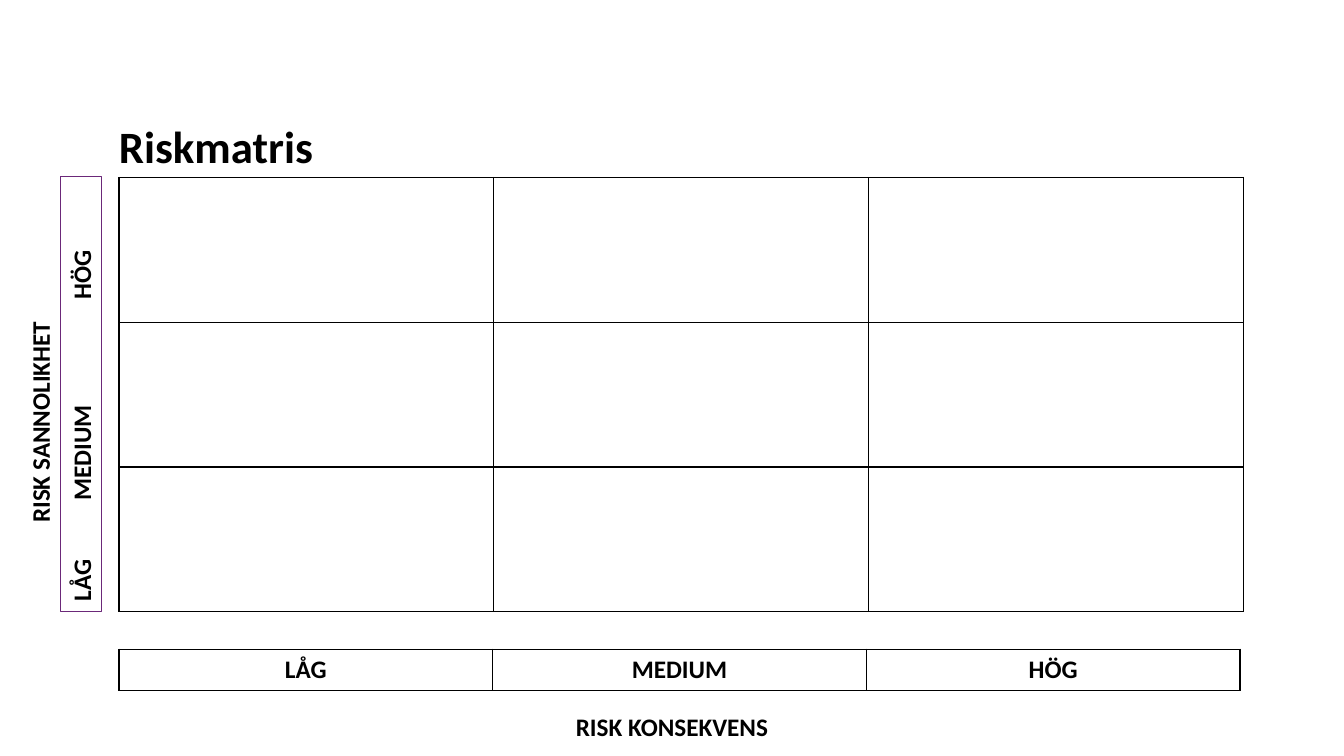
import pptx
import pptx.dml.color
import pptx.enum.shapes
import pptx.enum.text
import pptx.oxml.ns
import pptx.util
from lxml import etree

Inches = pptx.util.Inches
Pt = pptx.util.Pt
RGBColor = pptx.dml.color.RGBColor
qn = pptx.oxml.ns.qn

BLACK = RGBColor(0x00, 0x00, 0x00)
WHITE = RGBColor(0xFF, 0xFF, 0xFF)
PURPLE = RGBColor(0x6B, 0x28, 0x79)
LEVELS = ["LÅG", "MEDIUM", "HÖG"]
LEFT = 1.18
SIDE = 4.31


class Board:
    """Holds the text style and the slide being drawn."""

    def __init__(self, slide, font="Calibri", size=18):
        self.slide = slide
        self.font = font
        self.size = size

    def label(self, frame, text, size=None, align=None, tabs=()):
        para = frame.paragraphs[0]
        para.alignment = align or pptx.enum.text.PP_ALIGN.LEFT
        if tabs:
            stops = etree.SubElement(para._p.get_or_add_pPr(), qn("a:tabLst"))
            for pos in tabs:
                etree.SubElement(stops, qn("a:tab"), pos=str(Inches(pos)), algn="l")
        run = para.add_run()
        run.text = text
        run.font.name = self.font
        run.font.size = Pt(size or self.size)
        run.font.bold = True
        run.font.color.rgb = BLACK

    def title(self, text, left, top, width, height):
        box = self.slide.shapes.add_textbox(
            Inches(left), Inches(top), Inches(width), Inches(height))
        frame = box.text_frame
        frame.word_wrap = True
        frame.margin_left = frame.margin_right = 0
        frame.margin_top = frame.margin_bottom = 0
        self.label(frame, text, 32)

    def upright(self, text, left, top, line=None, tabs=()):
        """Adds a label that reads from bottom to top."""
        box = self.slide.shapes.add_shape(
            pptx.enum.shapes.MSO_SHAPE.RECTANGLE,
            Inches(left), Inches(top), Inches(SIDE), Inches(0.4))
        box.rotation = 270
        box.shadow.inherit = False
        box.fill.background()
        if line is None:
            box.line.fill.background()
        else:
            box.line.color.rgb = line
            box.line.width = Pt(0.75)
        box.text_frame.word_wrap = True
        box.text_frame.vertical_anchor = pptx.enum.text.MSO_ANCHOR.TOP
        self.label(box.text_frame, text, tabs=tabs)

    def edge(self, cell, color):
        """Draws the four borders of a cell."""
        props = cell._tc.get_or_add_tcPr()
        for spot, name in enumerate(("lnL", "lnR", "lnT", "lnB")):
            line = etree.Element(qn("a:" + name), w=str(Pt(1)))
            fill = etree.SubElement(line, qn("a:solidFill"))
            etree.SubElement(fill, qn("a:srgbClr"), val=str(color))
            props.insert(spot, line)

    def table(self, rows, left, top, width, height, color=BLACK):
        table = self.slide.shapes.add_table(
            len(rows), len(rows[0]), Inches(left), Inches(top),
            Inches(width), Inches(height)).table
        table.first_row = table.horz_banding = False
        for r, row in enumerate(rows):
            for c, text in enumerate(row):
                cell = table.cell(r, c)
                cell.fill.background()
                self.edge(cell, color)
                if text:
                    self.label(cell.text_frame, text,
                               align=pptx.enum.text.PP_ALIGN.CENTER)


def main():
    deck = pptx.Presentation()
    deck.slide_width = Inches(13.33)
    deck.slide_height = Inches(7.5)
    board = Board(deck.slides.add_slide(deck.slide_layouts[6]))

    board.title("Riskmatris", LEFT, 1.18, 9.84, 0.44)
    board.upright("RISK SANNOLIKHET", -1.76, 2.93)
    board.upright("\t".join(LEVELS), -1.35, 3.71, PURPLE, tabs=(1, 3))
    board.table([[""] * 3] * 3, LEFT, 1.76, 11.15, SIDE)
    board.table([LEVELS], LEFT, 6.44, 11.12, 0.41)
    board.table([["RISK KONSEKVENS"]], 2.22, 7.02, 8.89, 0.41, WHITE)

    deck.save("out.pptx")


if __name__ == "__main__":
    main()
